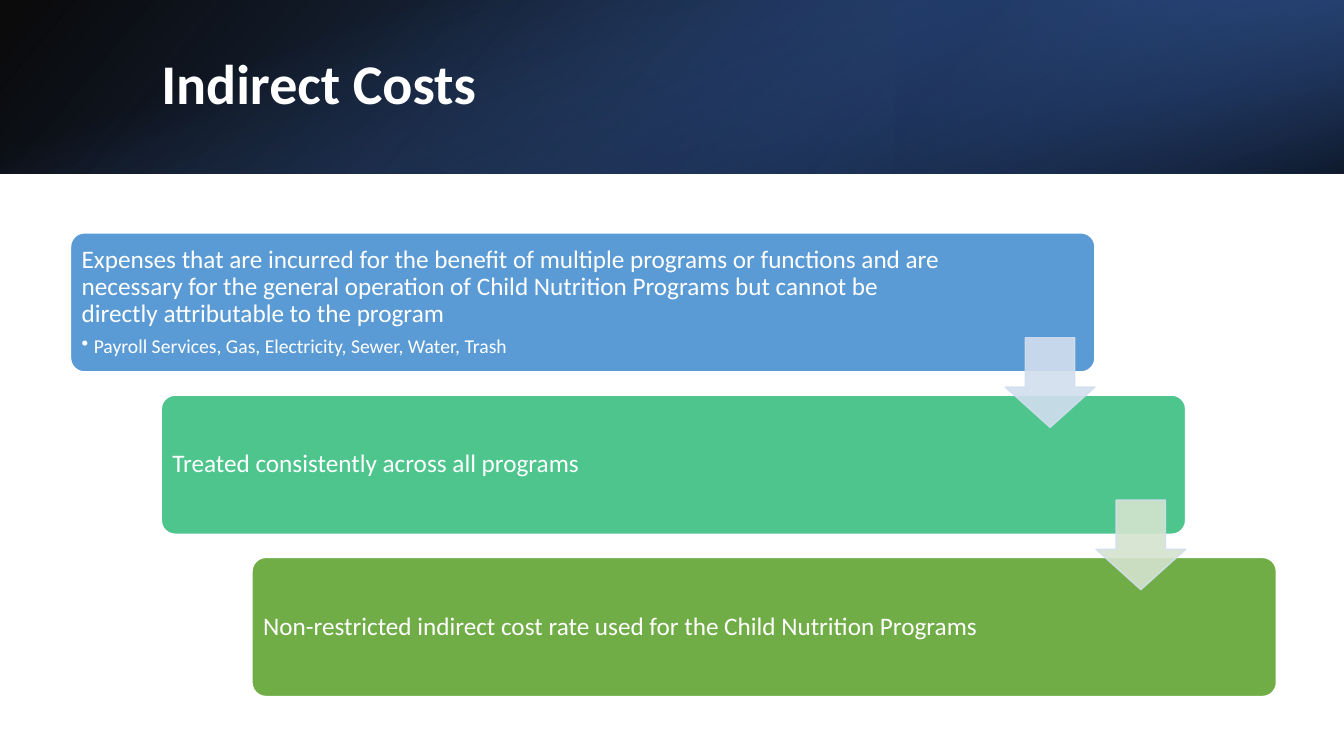
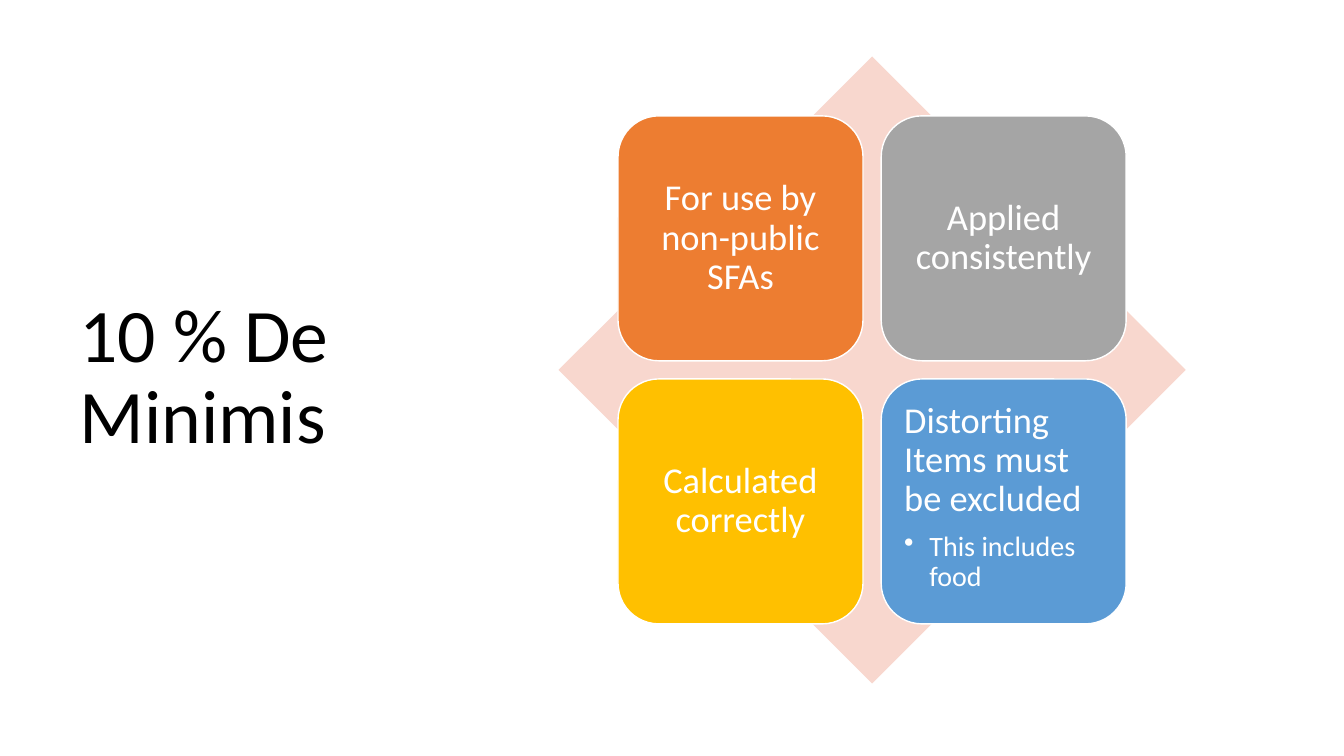
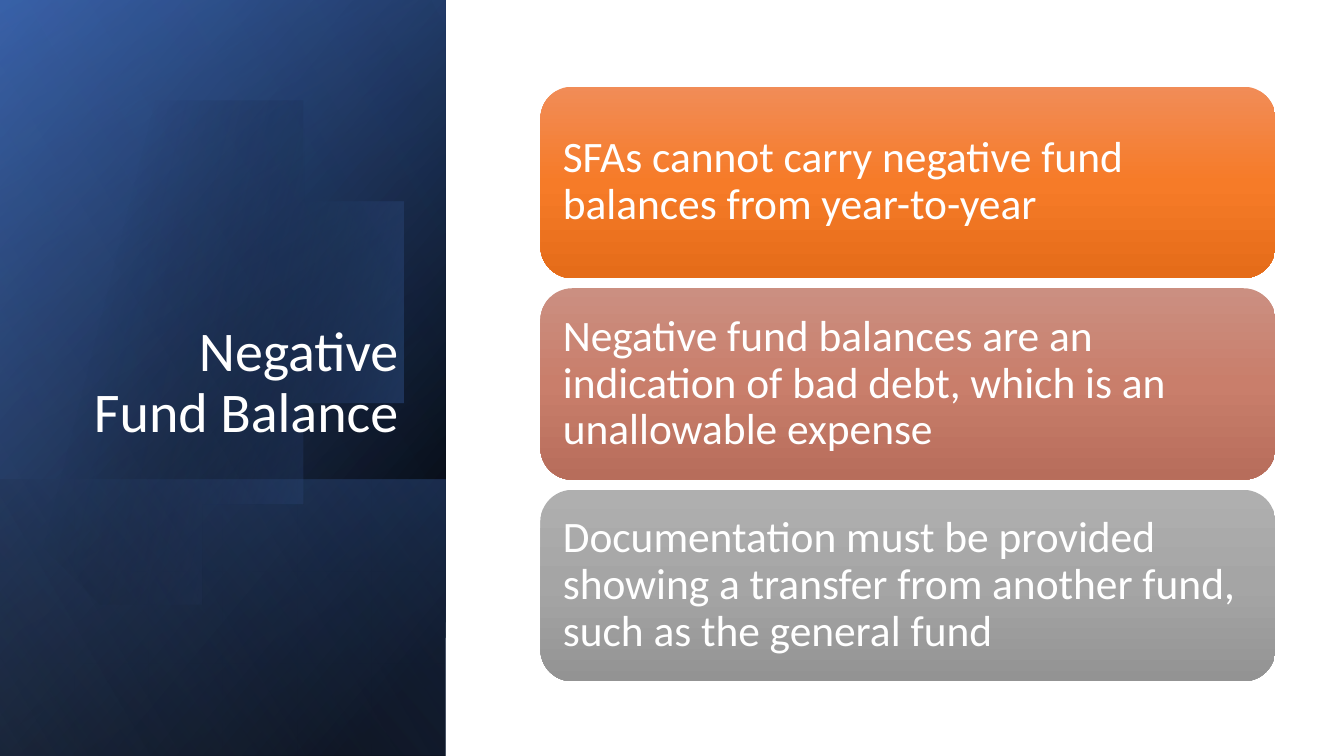
import math

from pptx import Presentation
from pptx.dml.color import RGBColor
from pptx.enum.shapes import MSO_SHAPE
from pptx.enum.text import MSO_ANCHOR, MSO_AUTO_SIZE, PP_ALIGN
from pptx.oxml import parse_xml
from pptx.oxml.ns import nsdecls, qn
from pptx.util import Inches, Pt

RECTANGLE, ROUNDED = MSO_SHAPE.RECTANGLE, MSO_SHAPE.ROUNDED_RECTANGLE
DIAMOND, DOWN_ARROW = MSO_SHAPE.DIAMOND, MSO_SHAPE.DOWN_ARROW
LEFT, CENTER, RIGHT = PP_ALIGN.LEFT, PP_ALIGN.CENTER, PP_ALIGN.RIGHT
TOP, MIDDLE, BOTTOM = MSO_ANCHOR.TOP, MSO_ANCHOR.MIDDLE, MSO_ANCHOR.BOTTOM
NO_AUTOFIT = MSO_AUTO_SIZE.NONE

WIDTH, HEIGHT = 13.33, 7.5
TITLE_ONLY = 5
FONT = "Calibri"
WHITE, BLACK = "FFFFFF", "000000"
BLUE, NAVY, DEEP_BLUE, PALE_BLUE = "4472C4", "2F5597", "203864", "8FAADC"
SKY, ORANGE, GREY = "5B9BD5", "ED7D31", "A5A5A5"
ARROW_EDGE = "D2DEEF"
BAND_HEIGHT = 1.72
PANEL_WIDTH = 4.42


def rgb(color):
    return RGBColor.from_string(color)


def inches(*lengths):
    return [Inches(length) for length in lengths]


def set_solid(fill, color, opacity=100):
    fill.solid()
    fill.fore_color.rgb = rgb(color)
    if opacity < 100:
        alpha = parse_xml(f'<a:alpha {nsdecls("a")} val="{opacity * 1000}"/>')
        fill._xPr.find(".//" + qn("a:srgbClr")).append(alpha)


def set_gradient(shape, angle, stops):
    """Fill with (position, colour, opacity) stops; the angle runs clockwise."""
    shape.fill.background()
    marks = "".join(
        f'<a:gs pos="{position * 1000}"><a:srgbClr val="{color}">'
        f'<a:alpha val="{opacity * 1000}"/></a:srgbClr></a:gs>'
        for position, color, opacity in stops)
    gradient = parse_xml(
        f'<a:gradFill {nsdecls("a")} rotWithShape="1"><a:gsLst>{marks}</a:gsLst>'
        f'<a:lin ang="{angle * 60000}" scaled="0"/></a:gradFill>')
    properties = shape._element.spPr
    properties.replace(properties.find(qn("a:noFill")), gradient)


def add_plain_shape(page, kind, left, top, width, height, adjustments=()):
    shape = page.shapes.add_shape(kind, *inches(left, top, width, height))
    shape.shadow.inherit = False
    shape.line.fill.background()
    for index, value in enumerate(adjustments):
        shape.adjustments[index] = value
    return shape


def set_outline(shape, color, opacity=100):
    set_solid(shape.line.fill, color, opacity)
    shape.line.width = Pt(1)


def add_band(page, area, angle, stops, rotation=0, flip=False):
    """Cover an area of the slide with a gradient, turned inside that area."""
    left, top, width, height = area
    if rotation == 90:
        left, top = left + (width - height) / 2, top + (height - width) / 2
        width, height = height, width
    band = add_plain_shape(page, RECTANGLE, left, top, width, height)
    band.rotation = rotation
    if flip:
        band._element.spPr.xfrm.set("flipH", "1")
    set_gradient(band, angle, stops)


def add_span(para, words, size, color, bold=False):
    span = para.add_run()
    span.text = words
    span.font.name, span.font.size = FONT, Pt(size)
    span.font.color.rgb, span.font.bold = rgb(color), bold


def set_title(page, words, area, size, color, anchor=MIDDLE, align=LEFT, bold=False):
    title = page.shapes.title
    title.left, title.top, title.width, title.height = inches(*area)
    title._element.getparent().append(title._element)  # above the bands
    frame = title.text_frame
    frame.auto_size, frame.vertical_anchor, frame.word_wrap = NO_AUTOFIT, anchor, True
    para = frame.paragraphs[0]
    para.alignment, para.line_spacing = align, 0.9
    add_span(para, words, size, color, bold)


def set_bullet(para, indent):
    properties = para._p.get_or_add_pPr()
    properties.set("marL", str(Inches(indent)))
    properties.set("indent", str(-Inches(indent)))
    properties.append(parse_xml(f'<a:buChar {nsdecls("a")} char="•"/>'))


def write_card(card, words, size, margin, align=LEFT, anchor=MIDDLE,
               right_margin=None, bullet=None):
    """Write the text of a card; bullet is (words, size, indent)."""
    frame = card.text_frame
    frame.word_wrap, frame.vertical_anchor = True, anchor
    frame.margin_left = frame.margin_top = frame.margin_bottom = Inches(margin)
    frame.margin_right = Inches(right_margin or margin)
    para = frame.paragraphs[0]
    para.alignment, para.line_spacing = align, 0.9
    para.space_after = Pt(round(size * 0.35))
    add_span(para, words, size, WHITE)
    if bullet:
        item, item_size, indent = bullet
        para = frame.add_paragraph()
        set_bullet(para, indent)
        para.alignment, para.line_spacing = LEFT, 0.9
        para.space_after = Pt(round(item_size * 0.15))
        add_span(para, item, item_size, WHITE)


def add_cut_disc(page, center_x, center_y, radius):
    """A disc cut straight by the left edge of the slide."""
    limit = math.acos(-center_x / radius)
    steps = 90
    points = []
    for step in range(steps + 1):
        angle = limit * (2 * step / steps - 1)
        points.append((center_x + radius * math.cos(angle),
                       center_y + radius * math.sin(angle)))
    builder = page.shapes.build_freeform(*points[0], scale=Inches(1))
    builder.add_line_segments(points[1:], close=True)
    disc = builder.convert_to_shape()
    disc.shadow.inherit = False
    disc.line.fill.background()
    return disc


def build_indirect_costs(page):
    band = (0, 0, WIDTH, BAND_HEIGHT)
    right_third = (WIDTH * 2 / 3, 0, WIDTH / 3, BAND_HEIGHT)
    add_band(page, band, 140, [(0, BLACK, 96), (100, NAVY, 100)], flip=True)
    add_band(page, right_third, 320, [(19, DEEP_BLUE, 68), (100, BLUE, 79)], 180, True)
    add_band(page, band, 340, [(23, BLUE, 0), (99, BLACK, 74)], 90)
    set_title(page, "Indirect Costs", (1.5, 0.38, 10.98, 0.96), 40, WHITE, bold=True)

    step_x, step_y = 0.9, 1.61
    steps = [
        (SKY, "Expenses that are incurred for the benefit of multiple programs or "
              "functions and are necessary for the general operation of Child Nutrition "
              "Programs but cannot be directly attributable to the program",
         ("Payroll Services, Gas, Electricity, Sewer, Water, Trash", 14, 0.12)),
        ("4DC58D", "Treated consistently across all programs", None),
        ("70AD47", "Non-restricted indirect cost rate used for the Child Nutrition Programs",
         None),
    ]
    for row, (color, words, bullet) in enumerate(steps):
        card = add_plain_shape(page, ROUNDED, 0.7 + row * step_x, 2.31 + row * step_y,
                               10.16, 1.38, [0.1])
        set_solid(card.fill, color)
        set_outline(card, WHITE)
        write_card(card, words, 18, 0.07, right_margin=1.48, bullet=bullet)
    for row, color in enumerate([ARROW_EDGE, "D5E3CF"]):
        arrow = add_plain_shape(page, DOWN_ARROW, 9.97 + row * step_x, 3.35 + row * step_y,
                                0.89, 0.89, [0.55, 0.45])
        set_solid(arrow.fill, color, 90)
        set_outline(arrow, ARROW_EDGE, 90)


def build_de_minimis(page):
    set_title(page, "10 % De Minimis", (0.69, 0.7, 3.74, 6.11), 54, BLACK)
    diamond = add_plain_shape(page, DIAMOND, 5.54, 0.56, 6.22, 6.22)
    set_solid(diamond.fill, "F8D7CE")

    side, pitch = 2.43, 2.61
    tiles = [
        (ORANGE, "For use by non-public SFAs", {}),
        (GREY, "Applied consistently", {}),
        ("FFC000", "Calculated correctly", {}),
        (SKY, "Distorting Items must be excluded",
         {"align": LEFT, "anchor": TOP, "bullet": ("This includes food", 20, 0.25)}),
    ]
    for index, (color, words, layout) in enumerate(tiles):
        row, column = divmod(index, 2)
        tile = add_plain_shape(page, ROUNDED, 6.13 + column * pitch, 1.15 + row * pitch,
                               side, side)
        set_solid(tile.fill, color)
        set_outline(tile, WHITE)
        write_card(tile, words, 26, 0.11, **{"align": CENTER, **layout})


def build_negative_balance(page):
    panel = (0, 0, PANEL_WIDTH, HEIGHT)
    foot = (0, 4.76, PANEL_WIDTH, HEIGHT - 4.76)
    add_band(page, panel, 50, [(8, BLACK, 100), (100, NAVY, 100)], 90, True)
    add_band(page, panel, 30, [(0, BLACK, 0), (99, BLUE, 46)], 90, True)
    add_band(page, foot, 130, [(2, BLUE, 29), (100, BLACK, 30)], 90, True)
    disc = add_cut_disc(page, 1.43, 3.38, 2.29)
    set_gradient(disc, 14, [(29, BLACK, 0), (100, BLUE, 43)])
    add_band(page, panel, 120, [(0, BLACK, 0), (99, PALE_BLUE, 11)], 90, True)
    set_title(page, "Negative Fund Balance", (0.64, 1.84, 3.41, 2.62), 40, WHITE,
              BOTTOM, RIGHT)

    cards = [
        (("F18C57", "F67B28", "E56C19"),
         "SFAs cannot carry negative fund balances from year-to-year"),
        (("CB8F81", "C97E6B", "B76D5B"),
         "Negative fund balances are an indication of bad debt, which is an "
         "unallowable expense"),
        (("AFAFAF", GREY, "939393"),
         "Documentation must be provided showing a transfer from another fund, "
         "such as the general fund"),
    ]
    for row, (shades, words) in enumerate(cards):
        card = add_plain_shape(page, ROUNDED, 5.36, 0.86 + row * 2, 7.29, 1.9)
        set_gradient(card, 90, [(50 * index, shade, 100)
                                for index, shade in enumerate(shades)])
        write_card(card, words, 31, 0.13)


def main():
    deck = Presentation()
    deck.slide_width, deck.slide_height = inches(WIDTH, HEIGHT)
    for build in (build_indirect_costs, build_de_minimis, build_negative_balance):
        build(deck.slides.add_slide(deck.slide_layouts[TITLE_ONLY]))
    deck.save("out.pptx")


if __name__ == "__main__":
    main()
